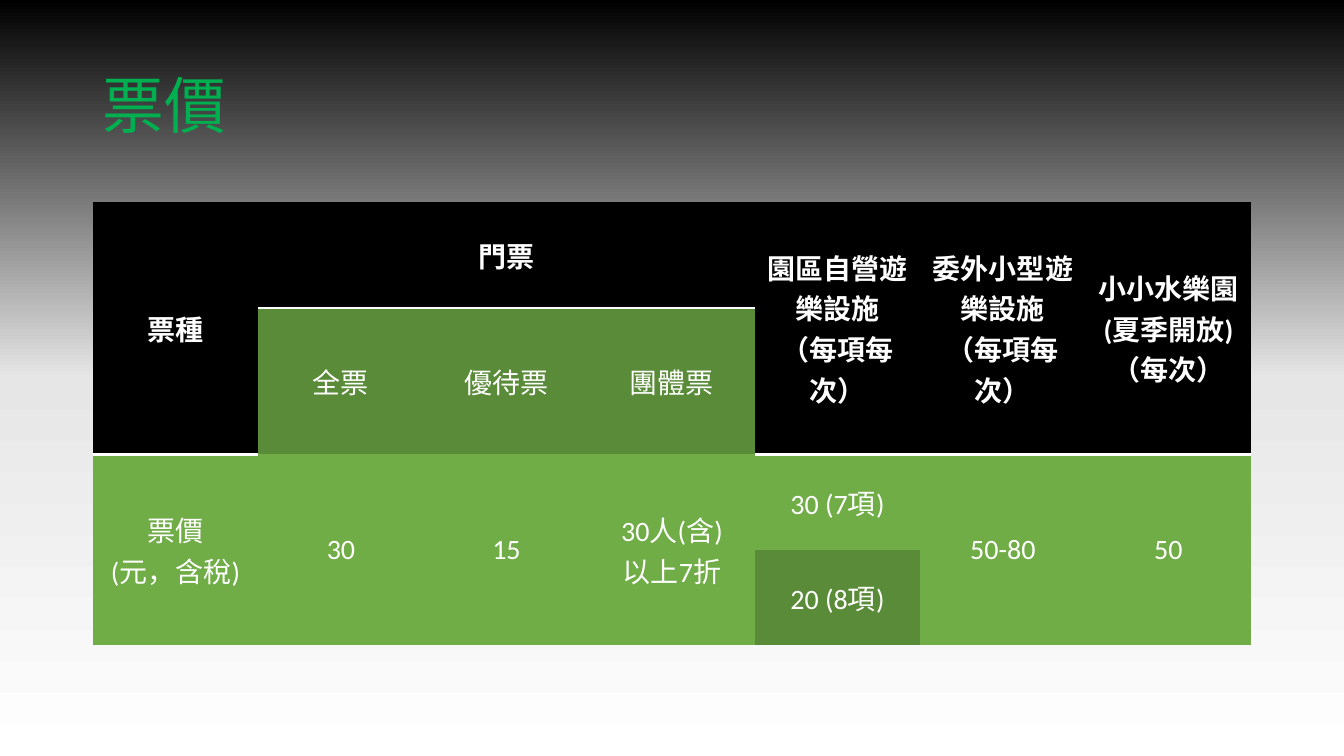
from copy import deepcopy
from dataclasses import dataclass

from lxml import etree
from pptx import Presentation
from pptx import util as u
from pptx.dml.color import RGBColor
from pptx.enum import text
from pptx.oxml.ns import qn

WIDTH, HEIGHT = u.Inches(13.33), u.Inches(7.5)
MARGIN = u.Inches(0.92)
COLUMNS = 7
COLUMN = (WIDTH - 2 * MARGIN) // COLUMNS
TABLE_TOP, TABLE_HEIGHT = u.Inches(2), u.Inches(4.4)
HEADER_SHARES = (0.24, 0.33)
PRICE_SHARE = (1 - sum(HEADER_SHARES)) / 2
ROW_SHARES = (*HEADER_SHARES, PRICE_SHARE, PRICE_SHARE)
LATIN, CJK = "Calibri", "Noto Sans CJK JP"
BLACK, WHITE, LIGHT, DARK = "000000", "FFFFFF", "70AD47", "5A8B39"
NO_STYLE = "{2D5ABB26-0587-4C30-8999-92F81FD0307C}"


@dataclass(frozen=True)
class Entry:
    row: int
    column: int
    words: str
    fill: str
    rows: int = 1
    columns: int = 1

    @property
    def is_header(self) -> bool:
        return self.fill == BLACK


ENTRIES = (
    Entry(0, 0, "票種", BLACK, rows=2),
    Entry(0, 1, "門票", BLACK, columns=3),
    Entry(0, 4, "園區自營遊樂設施\v（每項每次）", BLACK, rows=2),
    Entry(0, 5, "委外小型遊樂設施\v（每項每次）", BLACK, rows=2),
    Entry(0, 6, "小小水樂園\v(夏季開放)\v（每次）", BLACK, rows=2),
    Entry(1, 1, "全票", DARK),
    Entry(1, 2, "優待票", DARK),
    Entry(1, 3, "團體票", DARK),
    Entry(2, 0, "票價\v(元，含稅)", LIGHT, rows=2),
    Entry(2, 1, "30", LIGHT, rows=2),
    Entry(2, 2, "15", LIGHT, rows=2),
    Entry(2, 3, "30人(含)\v以上7折", LIGHT, rows=2),
    Entry(2, 4, "30 (7項)", LIGHT),
    Entry(3, 4, "20 (8項)", DARK),
    Entry(2, 5, "50-80", LIGHT, rows=2),
    Entry(2, 6, "50", LIGHT, rows=2),
)


def color(code: str) -> RGBColor:
    return RGBColor.from_string(code)


def style_runs(paragraph, size: float, latin: str, code: str, bold: bool = False) -> None:
    for run in paragraph.runs:
        run.font.size = u.Pt(size)
        run.font.bold = bold
        run.font.color.rgb = color(code)
        run.font.name = latin
        etree.SubElement(run.font._element, qn("a:ea"), typeface=CJK)


def paint_background(slide) -> None:
    fill = slide.background.fill
    fill.gradient()
    fill.gradient_angle = 90
    last_stop = fill.gradient_stops[1]._gs
    last_stop.addnext(deepcopy(last_stop))
    for stop, (position, code) in zip(
        fill.gradient_stops, ((0, WHITE), (0.5, "E7E6E6"), (1, BLACK))
    ):
        stop.position = position
        stop.color.rgb = color(code)


def add_title(slide) -> None:
    title = slide.shapes.add_textbox(
        MARGIN, u.Inches(0.35), COLUMN * COLUMNS, u.Inches(1.45)
    ).text_frame
    title.word_wrap = True
    title.vertical_anchor = text.MSO_ANCHOR.MIDDLE
    title.text = "票價"
    title.paragraphs[0].line_spacing = 0.9
    style_runs(title.paragraphs[0], 44, CJK, "00B050")


def underline(cell) -> None:
    properties = cell._tc.get_or_add_tcPr()
    border = etree.Element(qn("a:lnB"), w=str(u.Pt(2)))
    solid = etree.SubElement(border, qn("a:solidFill"))
    etree.SubElement(solid, qn("a:srgbClr"), val=WHITE)
    properties.insert(0, border)


def fill_entry(table, entry: Entry) -> None:
    last_row = entry.row + entry.rows - 1
    last_column = entry.column + entry.columns - 1
    for row in range(entry.row, last_row + 1):
        for column in range(entry.column, last_column + 1):
            cell = table.cell(row, column)
            cell.fill.solid()
            cell.fill.fore_color.rgb = color(entry.fill)
            if entry.is_header:
                underline(cell)

    cell = table.cell(entry.row, entry.column)
    if entry.rows * entry.columns > 1:
        cell.merge(table.cell(last_row, last_column))
    cell.margin_left = cell.margin_right = u.Inches(0.03)
    cell.margin_top = cell.margin_bottom = u.Inches(0.03)
    cell.vertical_anchor = text.MSO_ANCHOR.MIDDLE
    paragraph = cell.text_frame.paragraphs[0]
    paragraph.text = entry.words
    paragraph.alignment = text.PP_ALIGN.CENTER
    style_runs(paragraph, 20, LATIN, WHITE, entry.is_header)


def add_prices(slide) -> None:
    table = slide.shapes.add_table(
        len(ROW_SHARES), COLUMNS, MARGIN, TABLE_TOP, COLUMN * COLUMNS, TABLE_HEIGHT
    ).table
    table._tbl.tblPr.find(qn("a:tableStyleId")).text = NO_STYLE
    table.horz_banding = False
    for row, share in zip(table.rows, ROW_SHARES):
        row.height = round(TABLE_HEIGHT * share)
    for entry in ENTRIES:
        fill_entry(table, entry)


def main() -> None:
    deck = Presentation()
    deck.slide_width, deck.slide_height = WIDTH, HEIGHT
    slide = deck.slides.add_slide(deck.slide_layouts[6])
    paint_background(slide)
    add_title(slide)
    add_prices(slide)
    deck.save("out.pptx")


if __name__ == "__main__":
    main()
